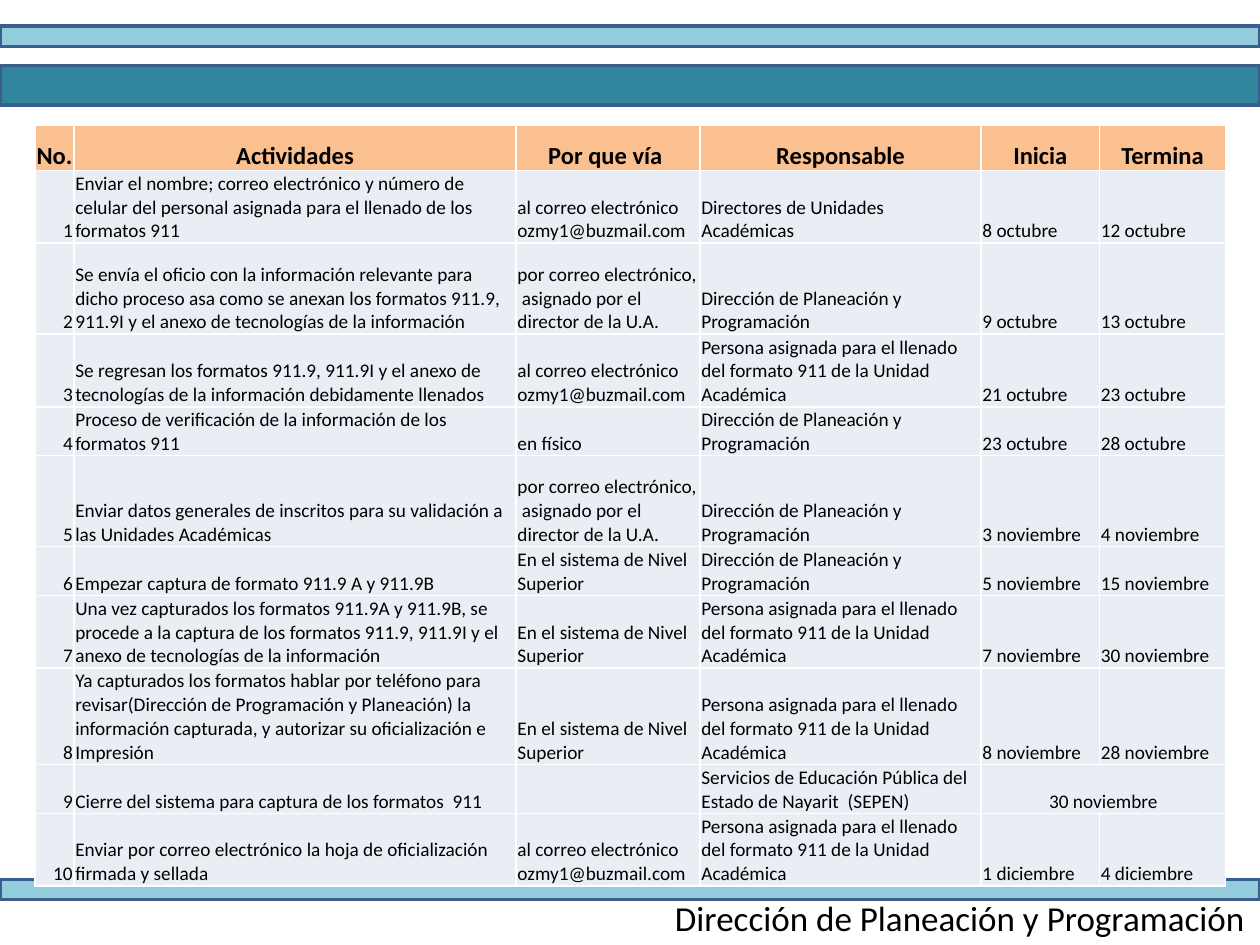
from lxml.etree import SubElement
from pptx import Presentation
from pptx.dml.color import RGBColor
from pptx.enum.shapes import MSO_SHAPE
from pptx.enum.text import MSO_ANCHOR, PP_ALIGN
from pptx.oxml.ns import qn
from pptx.util import Pt

MAIL = "al correo electrónico ozmy1@buzmail.com"
POST = "por correo electrónico,  asignado por el director de la U.A."
WEB = "En el sistema de Nivel Superior"
PLAN = "Dirección de Planeación y Programación"
STAFF = "Persona asignada para el llenado del formato 911 de la Unidad Académica"

HEAD = ["No. ", "Actividades", "Por que vía ", "Responsable", "Inicia", "Termina"]
# Task, channel, owner, start, end
TASKS = [
    ("Enviar el nombre; correo electrónico y número de celular del personal "
     "asignada para el llenado de los formatos 911",
     MAIL, "Directores de Unidades Académicas", "8 octubre", "12 octubre"),
    ("Se envía el oficio con la información relevante para dicho proceso asa como "
     "se anexan los formatos 911.9, 911.9I y el anexo de tecnologías de la información",
     POST, PLAN, "9 octubre", "13 octubre"),
    ("Se regresan los formatos 911.9, 911.9I y el anexo de tecnologías de la "
     "información debidamente llenados",
     MAIL, STAFF, "21 octubre", "23 octubre"),
    ("Proceso de verificación de la información de los formatos 911",
     "en físico", PLAN, "23 octubre", "28 octubre"),
    ("Enviar datos generales de inscritos para su validación a las Unidades Académicas",
     POST, PLAN, "3 noviembre", "4 noviembre"),
    ("Empezar captura de formato 911.9 A y 911.9B",
     WEB, PLAN, "5 noviembre", "15 noviembre"),
    ("Una vez capturados los formatos 911.9A y 911.9B, se procede a la captura de los "
     "formatos 911.9, 911.9I y el anexo de tecnologías de la información",
     WEB, STAFF, "7 noviembre", "30 noviembre"),
    ("Ya capturados los formatos hablar por teléfono para revisar(Dirección de "
     "Programación y Planeación) la información capturada, y autorizar su "
     "oficialización e Impresión",
     WEB, STAFF, "8 noviembre", "28 noviembre"),
    ("Cierre del sistema para captura de los formatos  911",
     "", "Servicios de Educación Pública del Estado de Nayarit  (SEPEN)",
     "30 noviembre", None),
    ("Enviar por correo electrónico la hoja de oficialización firmada y sellada",
     MAIL, STAFF, "1 diciembre", "4 diciembre"),
]
WIDTHS = [22.3, 252.7, 105.1, 160.6, 67.7, 72]
HEIGHTS = [26, 26, 52, 37.4, 26, 52, 26, 39, 49, 26, 39]


def color(code):
    return RGBColor.from_string(code)


def write(frame, text, size=11, bold=False, align=PP_ALIGN.LEFT, ink="000000"):
    par = frame.paragraphs[0]
    par.alignment = align
    if not text:
        return
    run = par.add_run()
    run.text = text
    run.font.name = "Calibri"
    run.font.size = Pt(size)
    run.font.bold = bold
    run.font.color.rgb = color(ink)


class Deck:
    pale, teal, edge = "93CDDD", "31859C", "3A5F8C"
    peach, mist, white = "FAC090", "E9EDF4", "FFFFFF"

    def __init__(self, slide):
        self.slide = slide

    def bar(self, top, high, fill):
        bar = self.slide.shapes.add_shape(
            MSO_SHAPE.RECTANGLE, Pt(0), Pt(top), Pt(720), Pt(high))
        bar.shadow.inherit = False
        bar.fill.solid()
        bar.fill.fore_color.rgb = color(fill)
        bar.line.color.rgb = color(self.edge)
        bar.line.width = Pt(2)

    def cell(self, cell, text, fill, **look):
        cell.margin_left = cell.margin_right = cell.margin_top = Pt(0.75)
        cell.margin_bottom = Pt(0)
        cell.vertical_anchor = MSO_ANCHOR.BOTTOM
        # White border on each side
        props = cell._tc.get_or_add_tcPr()
        for side in ("lnL", "lnR", "lnT", "lnB"):
            line = SubElement(props, qn("a:" + side), w=str(Pt(1)))
            paint = SubElement(line, qn("a:solidFill"))
            SubElement(paint, qn("a:srgbClr"), val=self.white)
        cell.fill.solid()
        cell.fill.fore_color.rgb = color(fill)
        write(cell.text_frame, text, **look)

    def table(self, left, top, head, tasks):
        table = self.slide.shapes.add_table(
            len(tasks) + 1, len(head), Pt(left), Pt(top),
            Pt(sum(WIDTHS)), Pt(sum(HEIGHTS))).table
        table.first_row = table.horz_banding = False
        for col, wide in zip(table.columns, WIDTHS):
            col.width = Pt(wide)
        for row, high in zip(table.rows, HEIGHTS):
            row.height = Pt(high)
        for c, text in enumerate(head):
            self.cell(table.cell(0, c), text, self.peach,
                      size=14, bold=True, align=PP_ALIGN.CENTER)
        for r, task in enumerate(tasks, 1):
            # A task with no end date has one date across both columns
            single = task[-1] is None
            if single:
                table.cell(r, 4).merge(table.cell(r, 5))
            for c, text in enumerate((str(r), *task)):
                align = PP_ALIGN.LEFT
                if c == 0:
                    align = PP_ALIGN.RIGHT
                elif single and c == 4:
                    align = PP_ALIGN.CENTER
                self.cell(table.cell(r, c), text, self.mist, align=align)

    def label(self, left, top, wide, high, text, **look):
        frame = self.slide.shapes.add_textbox(
            Pt(left), Pt(top), Pt(wide), Pt(high)).text_frame
        frame.word_wrap = True
        write(frame, text, **look)


def main():
    show = Presentation()
    show.slide_width, show.slide_height = Pt(720), Pt(540)
    deck = Deck(show.slides.add_slide(show.slide_layouts[6]))

    # Bands at the top and bottom
    deck.bar(15, 11.5, deck.pale)
    deck.bar(37.5, 22.5, deck.teal)
    deck.bar(502.5, 11.5, deck.pale)

    # Schedule
    deck.table(20, 71.5, HEAD, TASKS)

    # Footer
    deck.label(3, 508.5, 720, 31.5, PLAN + " ", size=20, align=PP_ALIGN.RIGHT)
    show.save("out.pptx")


if __name__ == "__main__":
    main()
